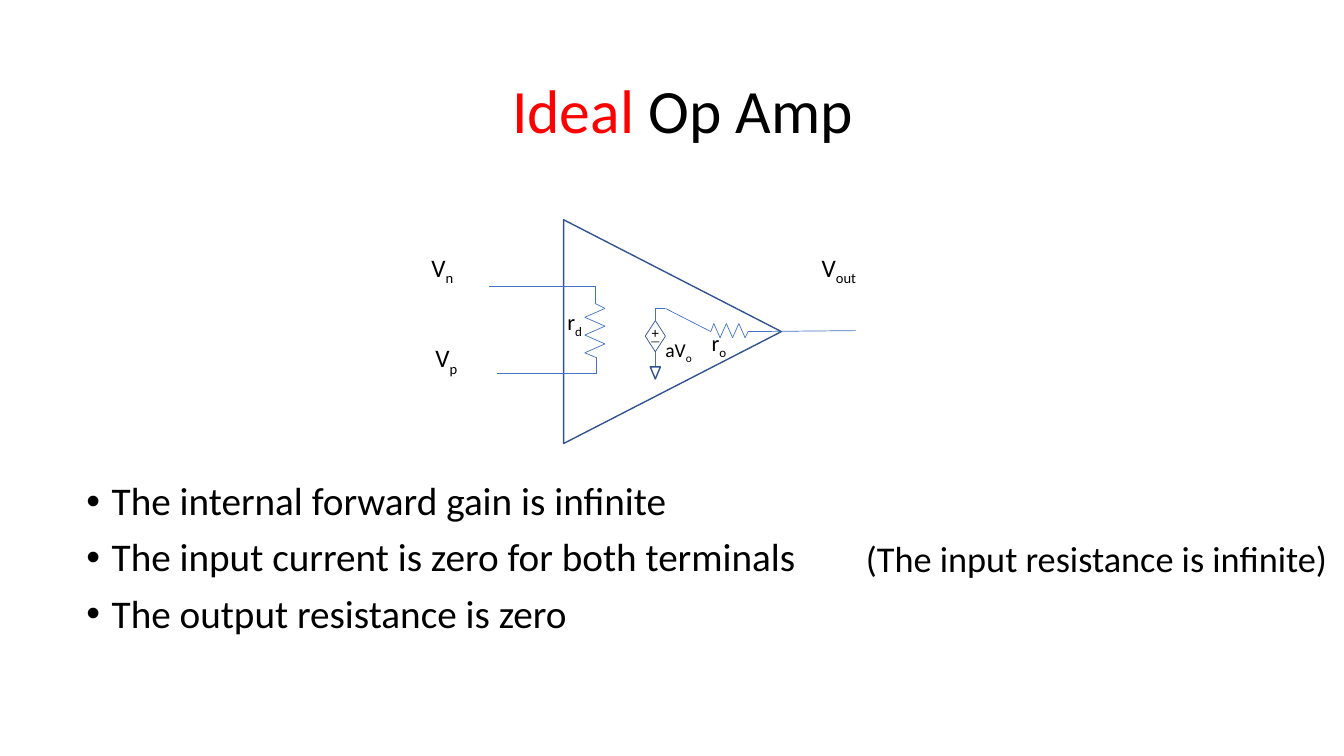
from dataclasses import dataclass

import pptx
import pptx.dml.color
import pptx.enum.shapes
import pptx.enum.text
import pptx.oxml.ns
import pptx.util
from lxml import etree
from pptx.util import Inches

SHAPE = pptx.enum.shapes.MSO_SHAPE
ALIGN = pptx.enum.text.PP_ALIGN
ANCHOR = pptx.enum.text.MSO_ANCHOR
qn = pptx.oxml.ns.qn


@dataclass(frozen=True)
class Theme:
    font: str = "Calibri"
    ink: str = "000000"
    accent: str = "FF0000"
    outline: str = "325491"
    wire: str = "4472C4"
    title: float = 44
    body: float = 28
    remark: float = 25.9
    terminal: float = 18
    resistor: float = 16
    source: float = 14
    plus: float = 10.5
    minus: float = 8
    thin: float = 0.5
    medium: float = 1


THEME = Theme()


def rgb(value):
    return pptx.dml.color.RGBColor.from_string(value)


def add_bullet(paragraph):
    properties = paragraph._p.get_or_add_pPr()
    properties.set("marL", str(Inches(0.25)))
    properties.set("indent", str(-Inches(0.25)))
    etree.SubElement(properties, qn("a:buFont")).set("typeface", "Arial")
    etree.SubElement(properties, qn("a:buChar")).set("char", "•")


def add_text(shapes, box, paragraphs, *, size, align=ALIGN.LEFT, anchor=ANCHOR.TOP,
             spacing=None, before=None, bullet=False):
    """Each paragraph is a list of (text, run format) pairs."""
    frame = shapes.add_textbox(*map(Inches, box)).text_frame
    frame.word_wrap = True
    frame.vertical_anchor = anchor
    for index, runs in enumerate(paragraphs):
        paragraph = frame.add_paragraph() if index else frame.paragraphs[0]
        paragraph.alignment = align
        if spacing:
            paragraph.line_spacing = spacing
        if before:
            paragraph.space_before = pptx.util.Pt(before)
        if bullet:
            add_bullet(paragraph)
        for text, style in runs:
            run = paragraph.add_run()
            run.text = text
            run.font.name = THEME.font
            run.font.size = pptx.util.Pt(size)
            run.font.color.rgb = rgb(style.get("color", THEME.ink))
            if style.get("subscript"):
                run._r.get_or_add_rPr().set("baseline", "-25000")


def add_label(shapes, box, symbol, subscript, size):
    add_text(shapes, box, [[(symbol, {}), (subscript, {"subscript": True})]], size=size)


def add_outline(shapes, kind, box, weight):
    shape = shapes.add_shape(kind, *map(Inches, box))
    shape.shadow.inherit = False
    shape.fill.background()
    shape.line.color.rgb = rgb(THEME.outline)
    shape.line.width = pptx.util.Pt(weight)
    return shape


def add_line(shapes, start, end):
    line = shapes.add_connector(pptx.enum.shapes.MSO_CONNECTOR.STRAIGHT,
                                *map(Inches, (*start, *end)))
    line.line.color.rgb = rgb(THEME.wire)
    line.line.width = pptx.util.Pt(THEME.thin)
    etree.SubElement(line._element.spPr, qn("a:effectLst"))
    return line


def add_wire(shapes, *points):
    for start, end in zip(points, points[1:]):
        add_line(shapes, start, end)


def draw_input(shapes):
    # Zigzag between the two input leads
    pitch = (3.5 - 3.06) / 5
    zigzag = [(5.8 if i % 2 else 6, 3.06 + pitch * i) for i in range(6)]
    add_wire(shapes, (4.85, 2.84), (5.9, 2.84), (5.9, 3.01), *zigzag,
             (5.92, 3.55), (5.92, 3.7), (4.93, 3.7))
    add_label(shapes, (5.53, 3.01, 0.73, 0.37), "r", "d", THEME.resistor)


def draw_source(shapes):
    add_text(shapes, (6.36, 3.27, 0.19, 0.24), [[("—", {})]], size=THEME.minus)
    add_text(shapes, (6.37, 3.16, 0.19, 0.28), [[("+", {})]], size=THEME.plus)
    diamond = add_outline(shapes, SHAPE.DIAMOND, (6.4, 3.18, 0.2, 0.31), THEME.thin)
    add_line(shapes, (6.5, 3.06), (6.5, 3.18)).end_connect(diamond, 0)
    add_line(shapes, (6.5, 3.63), (6.5, 3.49)).end_connect(diamond, 2)
    ground = add_outline(shapes, SHAPE.ISOSCELES_TRIANGLE, (6.45, 3.64, 0.1, 0.12),
                         THEME.medium)
    ground._element.spPr.find(qn("a:xfrm")).set("flipV", "1")
    add_label(shapes, (6.5, 3.3, 0.63, 0.34), "aV", "o", THEME.source)


def draw_output(shapes):
    # Source lead, zigzag and output lead
    pitch = (7.39 - 7.08) / 5
    zigzag = [(7.08 + pitch * i, 3.35 if i % 2 else 3.21) for i in range(6)]
    add_wire(shapes, (6.5, 3.06), (6.6, 3.06), (7.05, 3.29), *zigzag,
             (7.42, 3.29), (8.49, 3.28))
    add_label(shapes, (6.96, 3.22, 0.52, 0.37), "r", "o", THEME.resistor)


def draw_amplifier(slide):
    shapes = slide.shapes.add_group_shape().shapes
    body = add_outline(shapes, SHAPE.ISOSCELES_TRIANGLE, (5.56, 2.21, 2.22, 2.16),
                       THEME.medium)
    body.rotation = 90
    draw_input(shapes)
    draw_source(shapes)
    draw_output(shapes)
    for left, top, subscript in ((4.18, 2.45, "n"), (4.22, 3.35, "p"), (8.05, 2.45, "out")):
        add_label(shapes, (left, top, 0.98, 0.7), "V", subscript, THEME.terminal)


def main():
    presentation = pptx.Presentation()
    presentation.slide_width = Inches(13.33)
    presentation.slide_height = Inches(7.5)
    slide = presentation.slides.add_slide(presentation.slide_layouts[6])

    # Title
    add_text(slide.shapes, (1.02, 0.4, 11.5, 1.45),
             [[("Ideal", {"color": THEME.accent}), (" Op Amp", {})]],
             size=THEME.title, align=ALIGN.CENTER, anchor=ANCHOR.MIDDLE, spacing=0.9)

    # Properties of the ideal amplifier
    properties = ("The internal forward gain is infinite",
                  "The input current is zero for both terminals",
                  "The output resistance is zero")
    add_text(slide.shapes, (0.76, 4.73, 11.5, 2), [[(text, {})] for text in properties],
             size=THEME.body, spacing=0.9, before=10, bullet=True)

    # Circuit
    draw_amplifier(slide)

    # Remark beside the second property
    add_text(slide.shapes, (8.49, 5.32, 5.06, 0.6),
             [[("(The input resistance is infinite)", {})]],
             size=THEME.remark, spacing=0.9, before=10)

    presentation.save("out.pptx")


if __name__ == "__main__":
    main()
